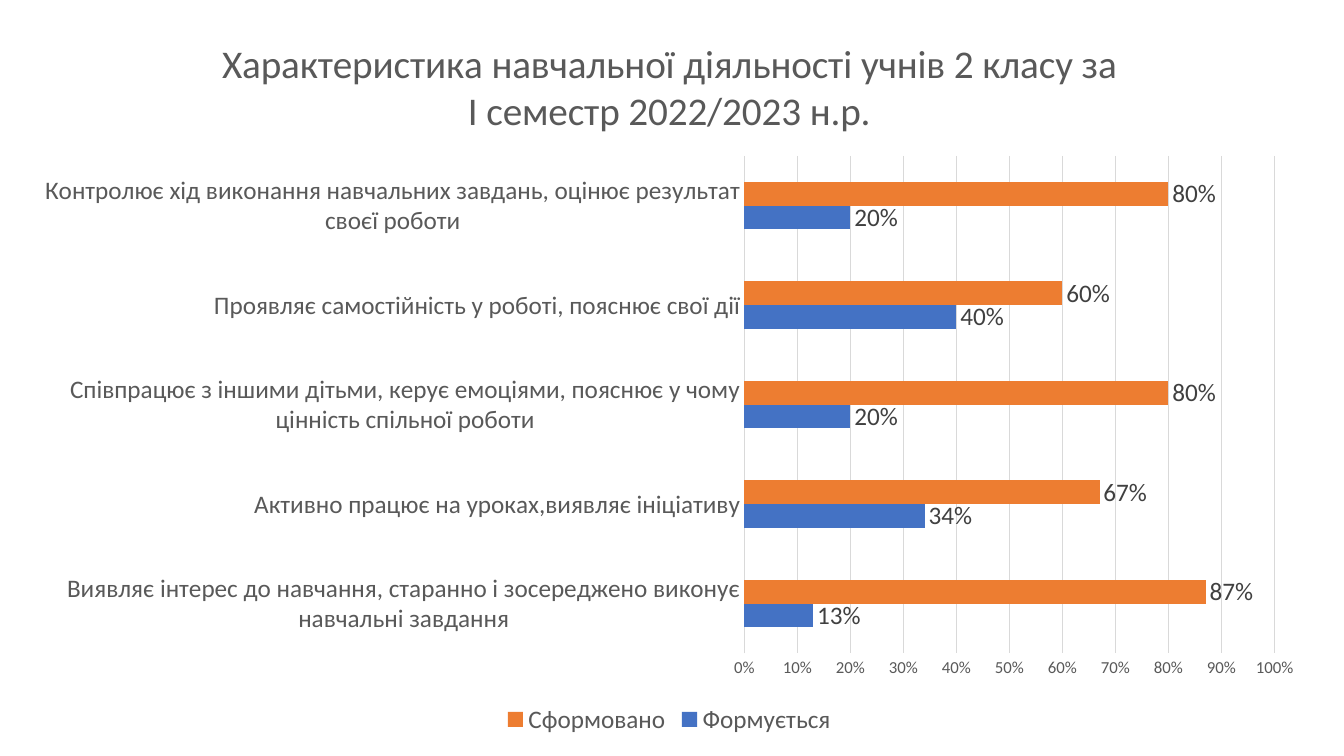
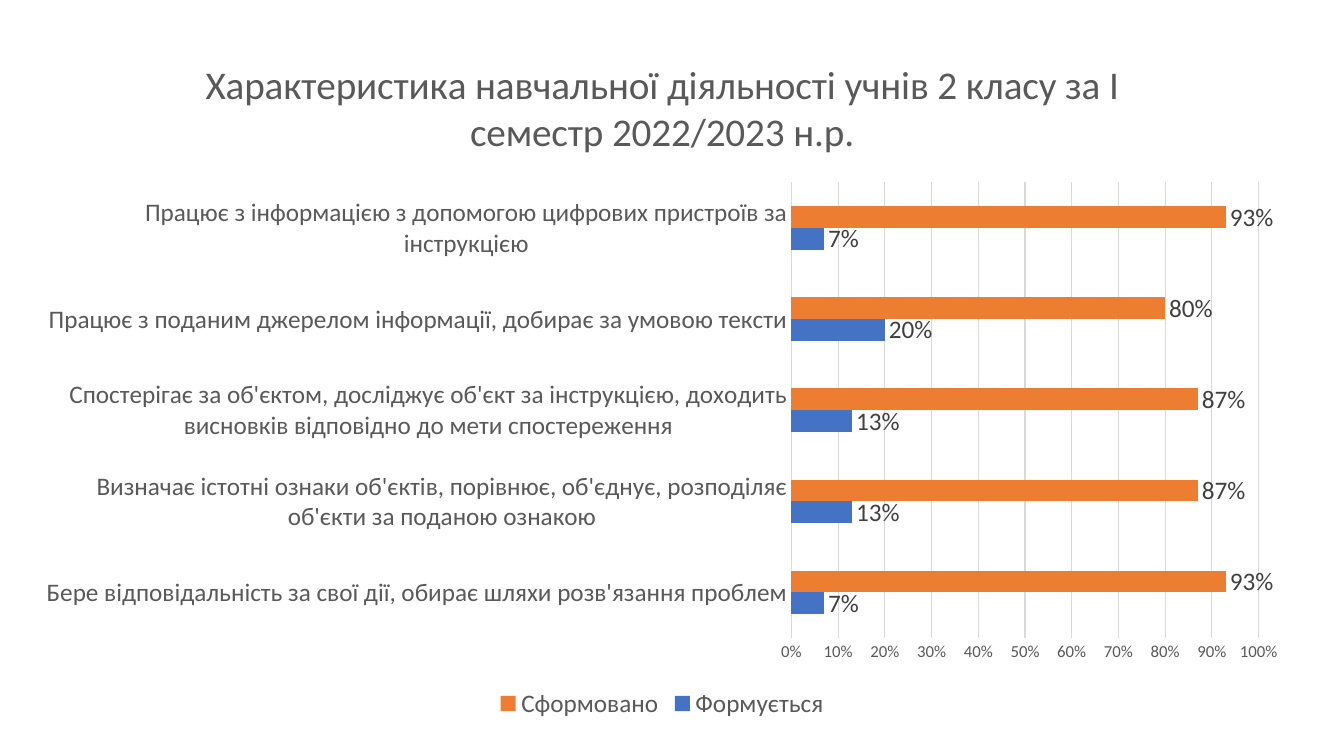
import dataclasses

import pptx
import pptx.chart.data
import pptx.dml.color
import pptx.enum.chart
import pptx.util

Cm = pptx.util.Cm
Pt = pptx.util.Pt
RGB = pptx.dml.color.RGBColor
XL = pptx.enum.chart


@dataclasses.dataclass(frozen=True)
class Theme:
    font: str = "Calibri"
    text: str = "595959"
    label: str = "404040"
    line: str = "D9D9D9"
    developing: str = "4472C4"
    formed: str = "ED7D31"
    title_size: int = 28
    body_size: int = 18
    axis_size: int = 12
    line_width: float = 0.75
    gap_width: int = 219


theme = Theme()


def set_font(font, size, color):
    font.name = theme.font
    font.size = Pt(size)
    font.bold = False
    font.color.rgb = RGB.from_string(color)


def set_line(line):
    line.color.rgb = RGB.from_string(theme.line)
    line.width = Pt(theme.line_width)


slides = [
    {
        "frame": (0.48, 0.43, 32.77, 18.21),
        "title": "Характеристика навчальної діяльності учнів 2 класу за\nІ семестр 2022/2023 н.р.",
        "rows": [
            ("Виявляє інтерес до навчання, старанно і зосереджено виконує навчальні завдання", 0.13, 0.87),
            ("Активно працює на уроках,виявляє ініціативу", 0.34, 0.67),
            ("Співпрацює з іншими дітьми, керує емоціями, пояснює у чому цінність спільної роботи", 0.2, 0.8),
            ("Проявляє самостійність у роботі, пояснює свої дії", 0.4, 0.6),
            ("Контролює хід виконання навчальних завдань, оцінює результат своєї роботи", 0.2, 0.8),
        ],
    },
    {
        "frame": (0.53, 0.79, 32.31, 17.45),
        "title": "Характеристика навчальної діяльності учнів 2 класу за І семестр 2022/2023 н.р.",
        "rows": [
            ("Бере відповідальність за свої дії, обирає шляхи розв'язання проблем", 0.07, 0.93),
            ("Визначає істотні ознаки об'єктів, порівнює, об'єднує, розподіляє об'єкти за поданою ознакою", 0.13, 0.87),
            ("Спостерігає за об'єктом, досліджує об'єкт за інструкцією, доходить висновків відповідно до мети спостереження", 0.13, 0.87),
            ("Працює з поданим джерелом інформації, добирає за умовою тексти", 0.2, 0.8),
            ("Працює з інформацією з допомогою цифрових пристроїв за інструкцією", 0.07, 0.93),
        ],
    },
]

prs = pptx.Presentation()
prs.slide_width = Cm(33.87)
prs.slide_height = Cm(19.05)

for content in slides:
    s = prs.slides.add_slide(prs.slide_layouts[6])

    names, developing, formed = zip(*content["rows"])
    data = pptx.chart.data.CategoryChartData(number_format="0%")
    data.categories = names
    data.add_series("Формується", developing)
    data.add_series("Сформовано", formed)
    frame = [Cm(length) for length in content["frame"]]
    chart = s.shapes.add_chart(XL.XL_CHART_TYPE.BAR_CLUSTERED, *frame, data).chart
    set_font(chart.font, theme.body_size, theme.text)

    chart.has_title = True
    tf = chart.chart_title.text_frame
    tf.text = content["title"]
    for p in tf.paragraphs:
        for r in p.runs:
            set_font(r.font, theme.title_size, theme.text)

    chart.has_legend = True
    chart.legend.position = XL.XL_LEGEND_POSITION.BOTTOM
    chart.legend.include_in_layout = False
    set_font(chart.legend.font, theme.body_size, theme.text)

    cat_axis = chart.category_axis
    cat_axis.major_tick_mark = XL.XL_TICK_MARK.NONE
    set_font(cat_axis.tick_labels.font, theme.body_size, theme.text)
    set_line(cat_axis.format.line)

    val_axis = chart.value_axis
    val_axis.minimum_scale = 0
    val_axis.maximum_scale = 1
    val_axis.major_unit = 0.1
    val_axis.major_tick_mark = XL.XL_TICK_MARK.NONE
    val_axis.tick_labels.number_format = "0%"
    val_axis.tick_labels.number_format_is_linked = False
    set_font(val_axis.tick_labels.font, theme.axis_size, theme.text)
    val_axis.format.line.fill.background()
    set_line(val_axis.major_gridlines.format.line)

    plot = chart.plots[0]
    plot.gap_width = theme.gap_width
    plot.vary_by_categories = False
    for series, color in zip(plot.series, (theme.developing, theme.formed)):
        series.format.fill.solid()
        series.format.fill.fore_color.rgb = RGB.from_string(color)
        labels = series.data_labels
        labels.show_value = True
        labels.number_format = "0%"
        labels.number_format_is_linked = False
        labels.position = XL.XL_LABEL_POSITION.OUTSIDE_END
        set_font(labels.font, theme.body_size, theme.label)

prs.save("out.pptx")
